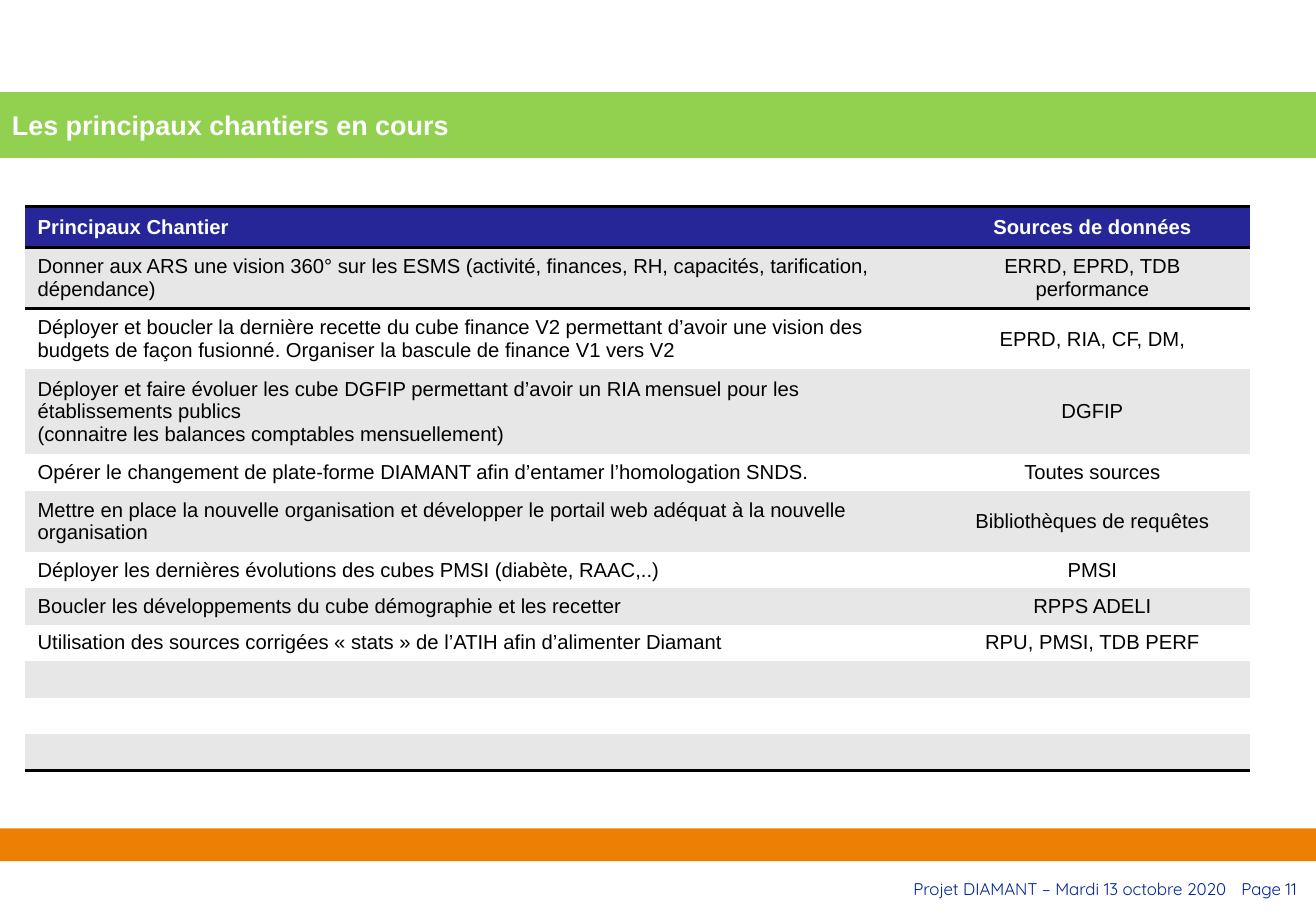
from lxml.etree import SubElement
from pptx import Presentation
from pptx.dml.color import RGBColor
from pptx.enum.shapes import MSO_SHAPE
from pptx.enum.text import MSO_ANCHOR, PP_ALIGN
from pptx.oxml.ns import qn
from pptx.util import Inches, Pt

WIDTH, HEIGHT = 10.83, 7.5
LEFT = 0.21
COLUMNS = (7.48, 2.6)
HEADER_HEIGHT, LINE_HEIGHT, ROW_PADDING = 0.34, 0.2, 0.1
GREEN, ORANGE, NAVY, BLUE = "92D050", "EE7F05", "262699", "002395"
GREY, WHITE, BLACK = "E7E7E7", "FFFFFF", "000000"
NO_STYLE = "{2D5ABB26-0587-4C30-8999-92F81FD0307C}"


def color(hex_text):
    return RGBColor.from_string(hex_text)


def write(frame, text, size=12, fill=BLACK, bold=False, font="Arial", align=PP_ALIGN.LEFT):
    frame.word_wrap = True
    frame.vertical_anchor = MSO_ANCHOR.MIDDLE
    for index, line in enumerate(text.split("\n")):
        paragraph = frame.add_paragraph() if index else frame.paragraphs[0]
        paragraph.alignment = align
        if not line:
            SubElement(paragraph._p, qn("a:endParaRPr"), sz=str(size * 100))
            continue
        run = paragraph.add_run()
        run.text = line
        run.font.size, run.font.bold, run.font.name = Pt(size), bold, font
        run.font.color.rgb = color(fill)


presentation = Presentation()
presentation.slide_width, presentation.slide_height = Inches(WIDTH), Inches(HEIGHT)
slide = presentation.slides.add_slide(presentation.slide_layouts[6])

# Full-width bands: the footer bar and the title
bands = [(6.82, 0.27, ORANGE, ""), (0.76, 0.54, GREEN, "Les principaux chantiers en cours")]
for top, height, fill, text in bands:
    shape = slide.shapes.add_shape(MSO_SHAPE.RECTANGLE, 0, Inches(top), Inches(WIDTH), Inches(height))
    shape.shadow.inherit = False
    shape.fill.solid()
    shape.fill.fore_color.rgb = color(fill)
    shape.line.fill.background()
    if text:
        write(shape.text_frame, text, size=16, fill=WHITE, bold=True)

# Footer text: date and page number, both right-aligned
for left, right, text in [(5.5, 10.09, "Projet DIAMANT – Mardi 13 octobre 2020"), (10.15, 10.67, "Page 11")]:
    box = slide.shapes.add_textbox(Inches(left), Inches(7.2), Inches(right - left), Inches(0.24))
    frame = box.text_frame
    frame.margin_left = frame.margin_right = frame.margin_top = frame.margin_bottom = 0
    write(frame, text, size=10, fill=BLUE, font="Quicksand", align=PP_ALIGN.RIGHT)

# Table content: number of lines, project, data sources
rows = [
    (1, "Principaux Chantier", "Sources de données"),
    (2, "Donner aux ARS une vision 360° sur les ESMS (activité, finances, RH, capacités, "
        "tarification, dépendance)", "ERRD, EPRD, TDB performance"),
    (2, "Déployer et boucler la dernière recette du cube finance V2 permettant d’avoir une vision "
        "des budgets de façon fusionné. Organiser la bascule de finance V1 vers V2",
     "EPRD, RIA, CF, DM,"),
    (3, "Déployer et faire évoluer les cube DGFIP permettant d’avoir un RIA mensuel pour les "
        "établissements publics\n(connaitre les balances comptables mensuellement)", "DGFIP"),
    (1, "Opérer le changement de plate-forme DIAMANT afin d’entamer l’homologation SNDS.",
     "Toutes sources"),
    (2, "Mettre en place la nouvelle organisation et développer le portail web adéquat à la "
        "nouvelle organisation", "Bibliothèques de requêtes"),
    (1, "Déployer les dernières évolutions des cubes PMSI (diabète, RAAC,..)", "PMSI"),
    (1, "Boucler les développements du cube démographie et les recetter", "RPPS ADELI"),
    (1, "Utilisation des sources corrigées « stats » de l’ATIH afin d’alimenter Diamant",
     "RPU, PMSI, TDB PERF"),
] + [(1, "", "")] * 3

heights = [HEADER_HEIGHT] + [ROW_PADDING + LINE_HEIGHT * lines for lines, *_ in rows[1:]]
table = slide.shapes.add_table(len(rows), len(COLUMNS), Inches(LEFT), Inches(1.7),
                               Inches(sum(COLUMNS)), Inches(sum(heights))).table
table.first_row = table.horz_banding = False
table._tbl.tblPr.find(qn("a:tableStyleId")).text = NO_STYLE
for column, width in zip(table.columns, COLUMNS):
    column.width = Inches(width)

# Table cells: banded fills, rules around the header and at the foot
last = len(rows) - 1
for row_index, (_, *texts) in enumerate(rows):
    table.rows[row_index].height = Inches(heights[row_index])
    header = row_index == 0
    edges = {0: ("a:lnT", "a:lnB"), 1: ("a:lnT",), last: ("a:lnB",)}.get(row_index, ())
    for column_index, text in enumerate(texts):
        cell = table.cell(row_index, column_index)
        write(cell.text_frame, text, fill=WHITE if header else BLACK, bold=header,
              align=PP_ALIGN.CENTER if column_index else PP_ALIGN.LEFT)
        cell.vertical_anchor = MSO_ANCHOR.MIDDLE
        properties = cell._tc.get_or_add_tcPr()
        for edge in edges:
            line = SubElement(properties, qn(edge), w=str(Pt(2)))
            SubElement(SubElement(line, qn("a:solidFill")), qn("a:srgbClr"), val=BLACK)
        cell.fill.solid()
        cell.fill.fore_color.rgb = color(NAVY if header else GREY if row_index % 2 else WHITE)

presentation.save("out.pptx")
